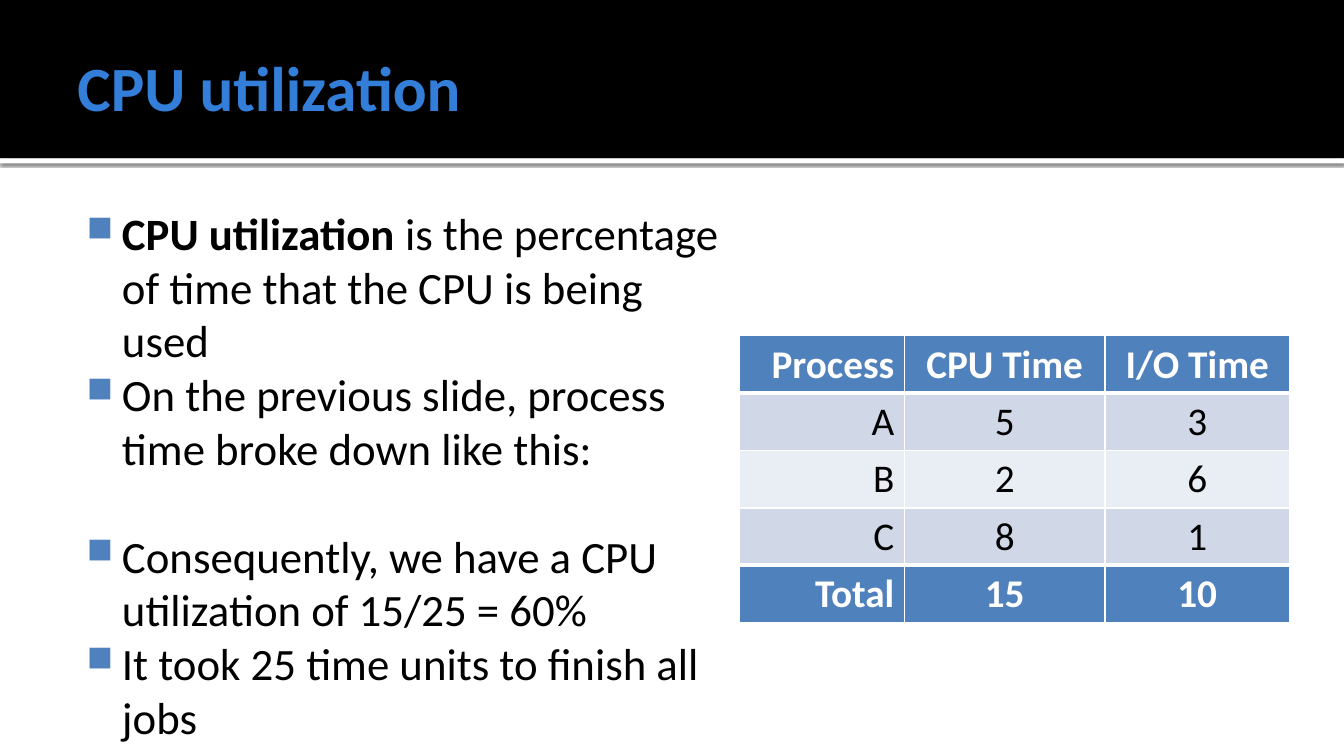
from lxml.etree import SubElement
from pptx import Presentation
from pptx.dml.color import RGBColor
from pptx.enum.shapes import MSO_SHAPE
from pptx.enum.text import MSO_ANCHOR, PP_ALIGN
from pptx.oxml.ns import qn
from pptx.util import Inches, Pt

BLACK = RGBColor(0x00, 0x00, 0x00)
WHITE = RGBColor(0xFF, 0xFF, 0xFF)
TITLE_BLUE = RGBColor(0x33, 0x7E, 0xD9)
ACCENT = RGBColor(0x4F, 0x81, 0xBD)
BAND_DARK = RGBColor(0xD0, 0xD8, 0xE8)
BAND_LIGHT = RGBColor(0xE9, 0xED, 0xF4)

POINTS = [
    ([("CPU utilization", True),
      (" is the percentage of time that the CPU is being used", False)], 0),
    ([("On the previous slide, process time broke down like this:", False)], 0),
    ([("Consequently, we have a CPU utilization of 15/25 = 60%", False)], 38.5),
    ([("It took 25 time units to finish all jobs", False)], 0),
]
TIMES = [
    ("Process", "CPU Time", "I/O Time"),
    ("A", "5", "3"),
    ("B", "2", "6"),
    ("C", "8", "1"),
    ("Total", "15", "10"),
]
COLUMN_WIDTHS = (1.64, 1.99, 1.83)
ROW_HEIGHT = 0.57


def add_text(paragraph, text, size=32, color=BLACK, bold=False):
    run = paragraph.add_run()
    run.text = text
    run.font.name = "Calibri"
    run.font.size = Pt(size)
    run.font.bold = bold
    run.font.color.rgb = color


def add_frame(slide, box, insets, anchor):
    frame = slide.shapes.add_textbox(*map(Inches, box)).text_frame
    frame.word_wrap = True
    frame.vertical_anchor = anchor
    (frame.margin_left, frame.margin_top,
     frame.margin_right, frame.margin_bottom) = map(Inches, insets)
    return frame


def add_band(slide, top, height, color):
    band = slide.shapes.add_shape(
        MSO_SHAPE.RECTANGLE, 0, Inches(top), Inches(13.33), Inches(height))
    band.shadow.inherit = False
    band.fill.solid()
    band.fill.fore_color.rgb = color
    band.line.fill.background()
    return band


def add_shadow(band):
    effects = band._element.spPr.find(qn("a:effectLst"))
    shadow = SubElement(effects, qn("a:outerShdw"), blurRad=str(Pt(2.5)),
                        dist=str(Pt(0.8)), dir="5400000", rotWithShape="0")
    tint = SubElement(shadow, qn("a:srgbClr"), val=str(BLACK))
    SubElement(tint, qn("a:alpha"), val="60000")


def add_bullet(paragraph):
    properties = paragraph._p.get_or_add_pPr()
    properties.set("marL", str(Inches(0.48)))
    properties.set("indent", str(Inches(-0.35)))
    bullet_color = SubElement(properties, qn("a:buClr"))
    SubElement(bullet_color, qn("a:srgbClr"), val=str(ACCENT))
    SubElement(properties, qn("a:buSzPct"), val="80000")
    SubElement(properties, qn("a:buChar"), char="■")


def add_points(slide):
    frame = add_frame(slide, (0.67, 1.94, 6.75, 5.06),
                      (0.06, 0.1, 0.1, 0.05), MSO_ANCHOR.TOP)
    for index, (parts, gap) in enumerate(POINTS):
        point = frame.add_paragraph() if index else frame.paragraphs[0]
        add_bullet(point)
        if gap:
            point.space_before = Pt(gap)
        for text, bold in parts:
            add_text(point, text, bold=bold)


def set_borders(cell, top, bottom):
    properties = cell._tc.get_or_add_tcPr()
    sides = (("a:lnL", 1), ("a:lnR", 1), ("a:lnT", top), ("a:lnB", bottom))
    for position, (tag, width) in enumerate(sides):
        border = SubElement(properties, qn(tag), w=str(Pt(width)))
        fill = SubElement(border, qn("a:solidFill"))
        SubElement(fill, qn("a:srgbClr"), val=str(WHITE))
        properties.insert(position, border)


def add_times_table(slide):
    last = len(TIMES) - 1
    table = slide.shapes.add_table(
        len(TIMES), len(COLUMN_WIDTHS), Inches(7.33), Inches(3.33),
        Inches(sum(COLUMN_WIDTHS)), Inches(ROW_HEIGHT * len(TIMES))).table
    for column, width in zip(table.columns, COLUMN_WIDTHS):
        column.width = Inches(width)
    for r, values in enumerate(TIMES):
        table.rows[r].height = Inches(ROW_HEIGHT)
        strong = r in (0, last)
        band = BAND_DARK if r % 2 else BAND_LIGHT
        for c, value in enumerate(values):
            cell = table.cell(r, c)
            cell.fill.solid()
            cell.fill.fore_color.rgb = ACCENT if strong else band
            set_borders(cell, top=3 if r in (1, last) else 1,
                        bottom=3 if r in (0, last - 1) else 1)
            paragraph = cell.text_frame.paragraphs[0]
            paragraph.alignment = PP_ALIGN.CENTER if c else PP_ALIGN.RIGHT
            add_text(paragraph, value, size=28, bold=strong,
                     color=WHITE if strong else BLACK)


def main():
    presentation = Presentation()
    presentation.slide_width = Inches(13.33)
    presentation.slide_height = Inches(7.5)
    slide = presentation.slides.add_slide(presentation.slide_layouts[6])

    add_shadow(add_band(slide, 1.57, 0.05, WHITE))
    add_band(slide, 0, 1.57, BLACK)
    title = add_frame(slide, (0.67, 0.17, 12, 1.37),
                      (0.1, 0.05, 0.05, 0.05), MSO_ANCHOR.MIDDLE)
    add_text(title.paragraphs[0], "CPU utilization", size=45,
             color=TITLE_BLUE, bold=True)
    add_points(slide)
    add_times_table(slide)
    presentation.save("out.pptx")


if __name__ == "__main__":
    main()
